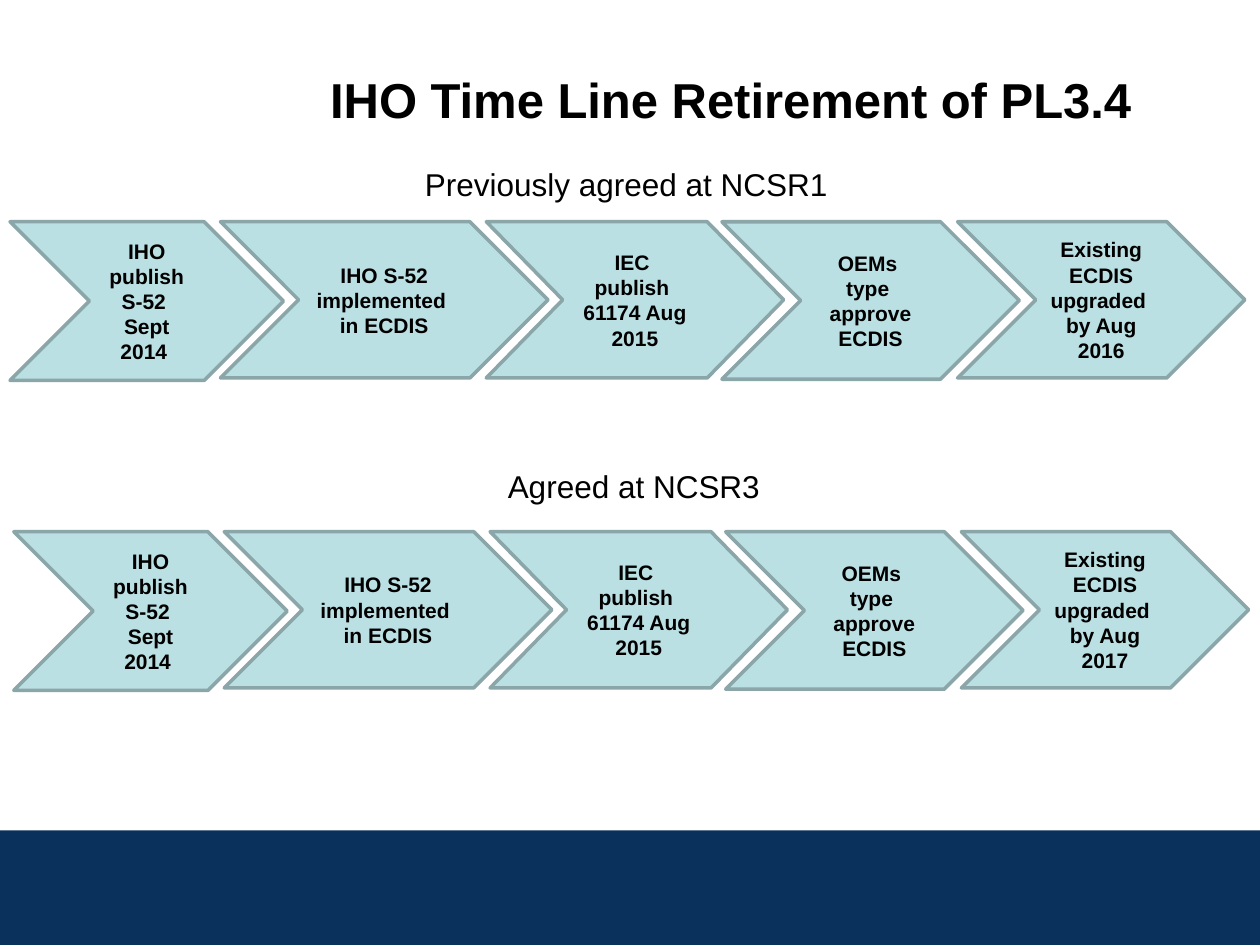
from dataclasses import dataclass

from pptx import Presentation
from pptx import util as u
from pptx.dml.color import RGBColor
from pptx.enum import shapes, text


@dataclass(frozen=True)
class Theme:
    font: str = "Arial"
    ink: RGBColor = RGBColor(0x00, 0x00, 0x00)
    band: RGBColor = RGBColor(0x09, 0x31, 0x5B)
    step_fill: RGBColor = RGBColor(0xBB, 0xE0, 0xE3)
    step_line: RGBColor = RGBColor(0x8A, 0xA6, 0xA8)
    title_size: int = 28
    caption_size: int = 18
    step_size: int = 12
    line_width: float = 2


@dataclass(frozen=True)
class Step:
    left: float  # from the start of its timeline
    width: float
    height: float
    lines: tuple[str, ...]
    point: float = 0.5


@dataclass(frozen=True)
class Timeline:
    left: float
    top: float
    caption: str
    caption_box: tuple[float, float, float, float]
    final_year: int


THEME = Theme()

# The last step's closing year differs between timelines
STEPS = (
    Step(0, 2.17, 1.26, ("IHO publish", "S-52 ", "Sept 2014 ")),
    Step(1.67, 2.6, 1.24, ("IHO S-52", "implemented ", "in ECDIS")),
    Step(3.78, 2.36, 1.24, ("IEC ", "publish ", "61174 Aug 2015"), 0.489),
    Step(5.65, 2.36, 1.25, ("OEMs ", "type ", "approve", "ECDIS")),
    Step(7.52, 2.28, 1.24, ("Existing ECDIS upgraded ", "by Aug {year}")),
)

TIMELINES = (
    Timeline(0.08, 1.76, "Previously agreed at NCSR1", (3.08, 1.26, 3.78, 0.4), 2016),
    Timeline(0.11, 4.22, "Agreed at NCSR3", (3.89, 3.66, 2.28, 0.4), 2017),
)


def set_all(target, values: dict) -> None:
    for name, value in values.items():
        setattr(target, name, value)


def write(sp, lines, size: int, bold: bool, align, anchor) -> None:
    """Fill a shape with one paragraph per line."""
    tf = sp.text_frame
    set_all(tf, {"word_wrap": True, "auto_size": text.MSO_AUTO_SIZE.NONE,
                 "vertical_anchor": anchor})
    for i, line in enumerate(lines):
        p = tf.paragraphs[0] if i == 0 else tf.add_paragraph()
        p.alignment = align
        r = p.add_run()
        r.text = line
        set_all(r.font, {"name": THEME.font, "size": u.Pt(size), "bold": bold})
        r.font.color.rgb = THEME.ink


def add_filled(s, kind, box, fill: RGBColor):
    sp = s.shapes.add_shape(kind, *map(u.Inches, box))
    sp.shadow.inherit = False
    sp.fill.solid()
    sp.fill.fore_color.rgb = fill
    return sp


def add_step(s, timeline: Timeline, step: Step) -> None:
    box = (timeline.left + step.left, timeline.top, step.width, step.height)
    sp = add_filled(s, shapes.MSO_SHAPE.CHEVRON, box, THEME.step_fill)
    sp.adjustments[0] = step.point
    sp.line.color.rgb = THEME.step_line
    sp.line.width = u.Pt(THEME.line_width)
    lines = [line.format(year=timeline.final_year) for line in step.lines]
    write(sp, lines, THEME.step_size, True,
          text.PP_ALIGN.CENTER, text.MSO_ANCHOR.MIDDLE)


def add_caption(s, timeline: Timeline) -> None:
    sp = s.shapes.add_textbox(*map(u.Inches, timeline.caption_box))
    write(sp, [timeline.caption], THEME.caption_size, False,
          text.PP_ALIGN.CENTER, text.MSO_ANCHOR.TOP)


def main() -> None:
    prs = Presentation()
    set_all(prs, {"slide_width": u.Inches(10), "slide_height": u.Inches(7.5)})
    s = prs.slides.add_slide(prs.slide_layouts[5])

    # Footer band
    band = add_filled(s, shapes.MSO_SHAPE.RECTANGLE, (0, 6.59, 10, 0.91), THEME.band)
    band.line.fill.background()

    # Title
    title = s.shapes.title
    set_all(title, {"left": u.Inches(2.52), "top": u.Inches(0.5),
                    "width": u.Inches(6.77), "height": u.Inches(0.57)})
    write(title, ["IHO Time Line Retirement of PL3.4"], THEME.title_size, True,
          text.PP_ALIGN.LEFT, text.MSO_ANCHOR.TOP)

    # Timelines
    for timeline in TIMELINES:
        add_caption(s, timeline)
        for step in STEPS:
            add_step(s, timeline, step)

    prs.save("out.pptx")


if __name__ == "__main__":
    main()
